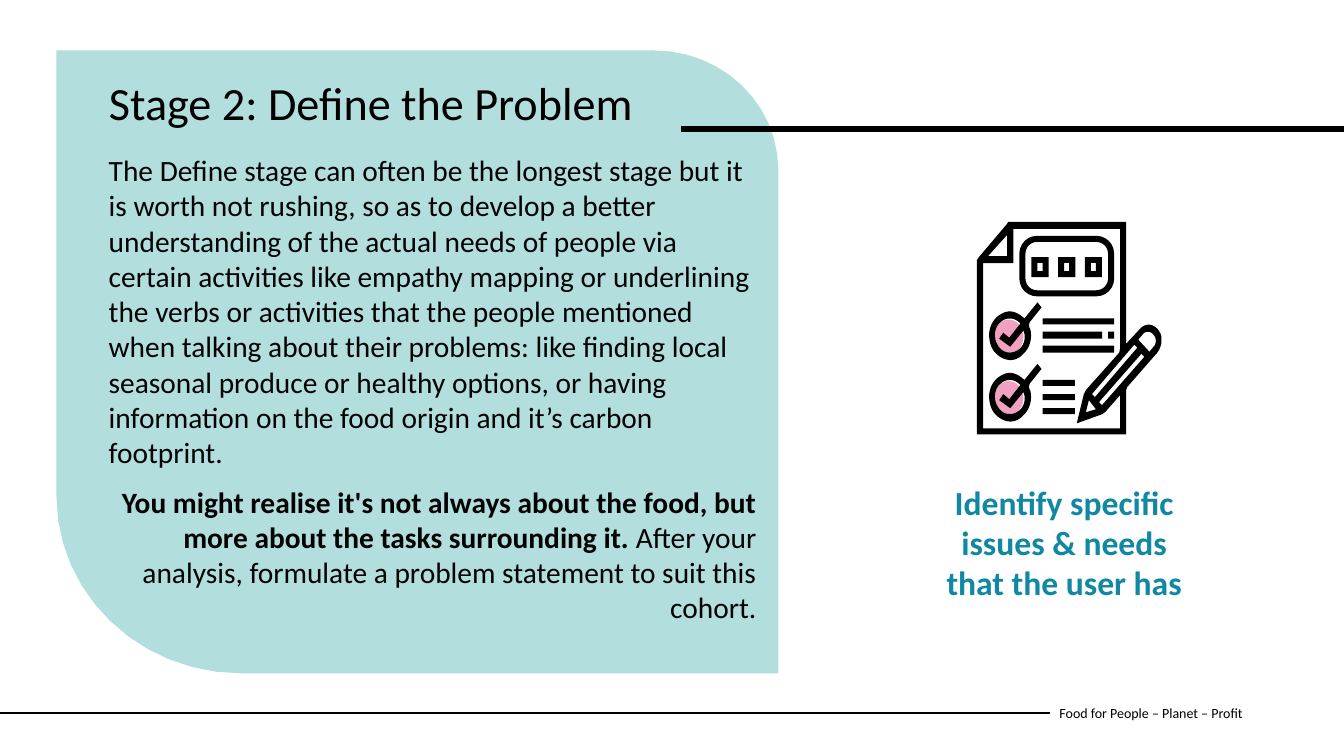
import dataclasses
import typing

import pptx
import pptx.dml.color
import pptx.enum.shapes
import pptx.enum.text
import pptx.oxml
import pptx.oxml.ns
import pptx.util

Inches = pptx.util.Inches
Align = pptx.enum.text.PP_ALIGN
Anchor = pptx.enum.text.MSO_ANCHOR
Preset = pptx.enum.shapes.MSO_SHAPE
Segment = tuple[float, ...]
Contour = list[Segment]

BLACK, PINK, MINT, TEAL, INK = "000000", "F1A0C2", "B2DEDD", "1188A3", "030303"
CURVE_STEPS = 12
TICK_OFFSETS = (-0.61, 0)


@dataclasses.dataclass
class Box:
    left: float
    top: float
    width: float
    height: float


@dataclasses.dataclass
class Run:
    text: str
    bold: bool = False


@dataclasses.dataclass
class Paragraph:
    runs: list[Run]
    formats: dict[str, typing.Any] = dataclasses.field(default_factory=dict)


@dataclasses.dataclass
class Rule:
    left: float
    right: float
    y: float
    weight: float


PANEL: Contour = [
    (7.72, 6.68), (2.39, 6.68), (1.38, 6.68, 0.56, 5.89, 0.56, 4.92),
    (0.56, 0.5), (6.48, 0.5), (7.17, 0.5, 7.72, 1.03, 7.72, 1.69),
]
PAGE_AND_PENCIL: list[Contour] = [
    [(10, 2.2), (11.17, 2.2), (11.17, 3.41), (11.3, 3.27),
     (11.37, 3.18, 11.49, 3.22, 11.52, 3.34), (11.52, 3.4),
     (11.51, 3.45, 11.49, 3.49, 11.46, 3.52), (11.18, 3.84), (11.17, 3.87),
     (11.17, 4.31), (9.69, 4.31), (9.69, 2.58), (9.71, 2.55), (9.99, 2.22)],
    [(11.11, 2.27), (10.05, 2.27), (10.05, 2.61), (9.75, 2.61), (9.75, 4.25),
     (11.11, 4.25), (11.11, 3.92), (10.96, 4.09), (10.93, 4.11), (10.68, 4.2),
     (10.75, 3.91), (10.77, 3.87), (11.1, 3.5), (11.11, 3.46)],
    [(11.25, 3.42), (10.83, 3.91), (10.86, 3.94), (11.28, 3.45)],
    [(10.93, 4.02), (11.35, 3.54), (11.32, 3.51), (10.9, 3.99)],
    [(9.8, 2.54), (9.99, 2.54), (9.99, 2.33)],
    [(11.4, 3.49), (11.45, 3.43), (11.47, 3.4, 11.47, 3.35, 11.44, 3.32),
     (11.42, 3.29, 11.37, 3.28, 11.34, 3.31), (11.29, 3.37)],
    [(10.8, 3.97), (10.77, 4.09), (10.87, 4.06)],
]
TICK: list[Contour] = [
    [(10.16, 3.77), (10.29, 3.61), (10.33, 3.66), (10.25, 3.76),
     (10.23, 3.79, 10.21, 3.8, 10.21, 3.82), (10.2, 3.84, 10.21, 3.86, 10.22, 3.88),
     (10.24, 3.98, 10.21, 4.07, 10.14, 4.13), (10.08, 4.19, 10, 4.2, 9.92, 4.15),
     (9.84, 4.1, 9.81, 4.02, 9.81, 3.92), (9.82, 3.83, 9.86, 3.76, 9.94, 3.72),
     (10.01, 3.68, 10.08, 3.7, 10.15, 3.76)],
    [(10.12, 3.82), (10.07, 3.76, 9.98, 3.75, 9.92, 3.81),
     (9.86, 3.86, 9.85, 3.97, 9.9, 4.04), (9.94, 4.11, 10.03, 4.13, 10.1, 4.08),
     (10.16, 4.04, 10.18, 3.95, 10.15, 3.89), (10.02, 4.05), (9.91, 3.97),
     (9.95, 3.91), (10.01, 3.96)],
]
BARS = [
    Box(10.34, 3.16, 0.71, 0.06), Box(10.34, 3.29, 0.59, 0.07),
    Box(10.99, 3.29, 0.06, 0.07), Box(10.34, 3.43, 0.71, 0.07),
    *[Box(10.34, round(3.77 + row * 0.14, 2), 0.32, 0.06) for row in range(3)],
]
RULES = [Rule(0, 10.41, 7.07, 1.5), Rule(6.75, 13.33, 1.28, 4.8)]


def colour(value: str) -> pptx.dml.color.RGBColor:
    return pptx.dml.color.RGBColor.from_string(value)


def apply(target: typing.Any, formats: dict[str, typing.Any]) -> None:
    for name, value in formats.items():
        setattr(target, name, value)


def place(box: Box) -> list[int]:
    return [Inches(value) for value in dataclasses.astuple(box)]


def paint(shape: typing.Any, fill: str) -> None:
    shape.shadow.inherit = False
    shape.fill.solid()
    shape.fill.fore_color.rgb = colour(fill)
    shape.line.fill.background()


def flatten(contour: Contour, shift: float) -> list[tuple[int, int]]:
    points = [contour[0]]
    for segment in contour[1:]:
        if len(segment) == 2:
            points.append(segment)
            continue
        controls = [points[-1], segment[:2], segment[2:4], segment[4:]]
        for step in range(1, CURVE_STEPS + 1):
            t = step / CURVE_STEPS
            weights = ((1 - t) ** 3, 3 * t * (1 - t) ** 2, 3 * t * t * (1 - t), t ** 3)
            points.append(tuple(
                sum(weight * point[axis] for weight, point in zip(weights, controls))
                for axis in (0, 1)
            ))
    return [(Inches(x), Inches(y + shift)) for x, y in points]


def draw_outline(shapes: typing.Any, contours: list[Contour], fill: str, shift: float = 0) -> None:
    first, *others = [flatten(contour, shift) for contour in contours]
    builder = shapes.build_freeform(*first[0], scale=1.0)
    builder.add_line_segments(first[1:], close=True)
    for points in others:
        builder.move_to(*points[0])
        builder.add_line_segments(points[1:], close=True)
    paint(builder.convert_to_shape(), fill)


def draw_preset(shapes: typing.Any, preset: typing.Any, box: Box, fill: str) -> typing.Any:
    shape = shapes.add_shape(preset, *place(box))
    paint(shape, fill)
    return shape


def draw_rule(shapes: typing.Any, rule: Rule) -> None:
    y = Inches(rule.y)
    connector = shapes.add_connector(
        pptx.enum.shapes.MSO_CONNECTOR.STRAIGHT, Inches(rule.left), y, Inches(rule.right), y)
    connector.line.color.rgb = colour(BLACK)
    connector.line.width = pptx.util.Pt(rule.weight)
    connector._element.spPr.append(pptx.oxml.parse_xml(
        f'<a:effectLst {pptx.oxml.ns.nsdecls("a")}/>'))


def write_text(shape: typing.Any, box: Box, paragraphs: list[Paragraph], size: float,
               ink: str, anchor: typing.Any = Anchor.TOP) -> None:
    apply(shape, dict(zip(("left", "top", "width", "height"), place(box))))
    frame = shape.text_frame
    apply(frame, {"word_wrap": True, "vertical_anchor": anchor,
                  "auto_size": pptx.enum.text.MSO_AUTO_SIZE.NONE})
    for index, content in enumerate(paragraphs):
        paragraph = frame.add_paragraph() if index else frame.paragraphs[0]
        apply(paragraph, {"alignment": Align.LEFT, **content.formats})
        for part in content.runs:
            run = paragraph.add_run()
            run.text = part.text
            apply(run.font, {"name": "Calibri", "size": pptx.util.Pt(size), "bold": part.bold})
            run.font.color.rgb = colour(ink)


def draw_checklist(shapes: typing.Any) -> None:
    for shift in TICK_OFFSETS:
        draw_preset(shapes, Preset.OVAL, Box(9.86, 3.78 + shift, 0.29, 0.34), PINK)
    draw_outline(shapes, PAGE_AND_PENCIL, BLACK)
    for shift in TICK_OFFSETS:
        draw_outline(shapes, TICK, BLACK, shift)
    badge = draw_preset(shapes, Preset.ROUNDED_RECTANGLE, Box(10.14, 2.37, 0.88, 0.54), BLACK)
    badge.adjustments[0] = 0.27
    badge.fill.background()
    badge.line.color.rgb = colour(BLACK)
    badge.line.width = Inches(0.06)
    for column in range(3):
        square = draw_preset(shapes, Preset.FRAME, Box(10.23 + column * 0.265, 2.55, 0.17, 0.2), BLACK)
        square.adjustments[0] = 0.35
    for bar in BARS:
        draw_preset(shapes, Preset.RECTANGLE, bar, BLACK)


def main() -> None:
    presentation = pptx.Presentation()
    apply(presentation, {"slide_width": Inches(13.33), "slide_height": Inches(7.5)})
    slide = presentation.slides.add_slide(presentation.slide_layouts.get_by_name("Title Only"))
    shapes = slide.shapes
    title = shapes.title
    draw_outline(shapes, [PANEL], MINT)
    for rule in RULES:
        draw_rule(shapes, rule)
    shapes._spTree.append(title._element)
    write_text(title, Box(0.98, 0.75, 5.46, 1.09),
               [Paragraph([Run("Stage 2: Define the Problem")], {"line_spacing": 0.9})], 33, BLACK)
    spacing = {"space_before": pptx.util.Pt(10)}
    body = [
        Paragraph([Run("The Define stage can often be the longest stage but it is worth not rushing, so as to develop a better understanding of the actual needs of people via certain activities like empathy mapping or underlining the verbs or activities that the people mentioned when talking about their problems: like finding local seasonal produce or healthy options, or having information on the food origin and it’s carbon footprint.")], spacing),
        Paragraph([Run("You might realise it's not always about the food, but more about the tasks surrounding it. ", True),
                   Run("After your analysis, formulate a problem statement to suit this cohort.")],
                  {**spacing, "alignment": Align.RIGHT}),
    ]
    caption = [Paragraph([Run(line, True)], {"alignment": Align.CENTER})
               for line in ("Identify specific", "issues & needs", "that the user has")]
    footer = [Paragraph([Run("Food for People – Planet – Profit")])]
    for box, paragraphs, size, ink, anchor in (
        (Box(0.98, 1.46, 6.62, 4.68), body, 21, INK, Anchor.TOP),
        (Box(8.44, 4.73, 4.23, 1.31), caption, 24, TEAL, Anchor.TOP),
        (Box(10.41, 6.87, 2.73, 0.4), footer, 10, BLACK, Anchor.MIDDLE),
    ):
        write_text(shapes.add_textbox(*place(box)), box, paragraphs, size, ink, anchor)
    draw_checklist(shapes.add_group_shape().shapes)
    presentation.save("out.pptx")


if __name__ == "__main__":
    main()
